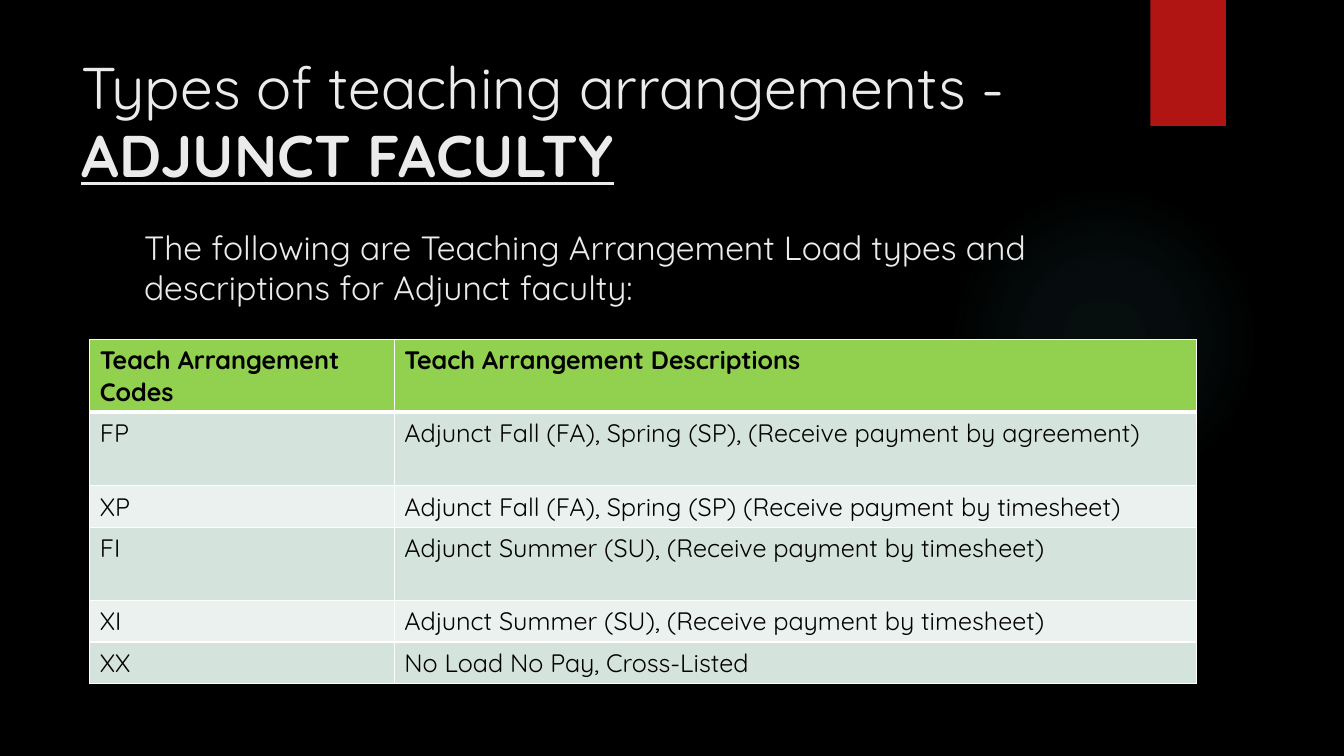
from dataclasses import dataclass

from lxml import etree
from pptx import Presentation
from pptx.dml.color import RGBColor
from pptx.enum.shapes import MSO_SHAPE
from pptx.enum.text import MSO_ANCHOR
from pptx.oxml import parse_xml
from pptx.oxml.ns import qn
from pptx.util import Inches, Pt

RECTANGLE, OVAL = MSO_SHAPE.RECTANGLE, MSO_SHAPE.OVAL
TOP = MSO_ANCHOR.TOP
FONT = "Quicksand"
BLACK, WHITE, PALE = "000000", "FFFFFF", "EBEBEB"
RED, GREEN, GLOW = "B01513", "92D050", "50B9C1"
BANDS = ("D4E3DB", "EBF1EE")
DRAWING_NS = "http://schemas.openxmlformats.org/drawingml/2006/main"


@dataclass
class Run:
    text: str
    size: float
    color: str
    bold: bool = False
    underline: bool = False


@dataclass
class Arrangement:
    code: str
    description: str
    height: float


ARRANGEMENTS = [
    Arrangement("Teach Arrangement Codes", "Teach Arrangement Descriptions", 0.72),
    Arrangement("FP", "Adjunct Fall (FA), Spring (SP), (Receive payment by agreement)", 0.73),
    Arrangement("XP", "Adjunct Fall (FA), Spring (SP) (Receive payment by timesheet)", 0.41),
    Arrangement("FI", "Adjunct Summer (SU), (Receive payment by timesheet)", 0.73),
    Arrangement("XI", "Adjunct Summer (SU), (Receive payment by timesheet)", 0.41),
    Arrangement("XX", "No Load No Pay, Cross-Listed", 0.41),
]
COLUMN_WIDTHS = (3.02, 7.96)


def rgb(value: str) -> RGBColor:
    return RGBColor.from_string(value)


def add_runs(paragraph, runs: list[Run]) -> None:
    for item in runs:
        run = paragraph.add_run()
        run.text = item.text
        run.font.name = FONT
        run.font.size = Pt(item.size)
        run.font.bold = item.bold
        run.font.underline = item.underline
        run.font.color.rgb = rgb(item.color)


def add_text(slide, left: float, top: float, width: float, height: float,
             runs: list[Run], spacing: float = 1.0) -> None:
    frame = slide.shapes.add_textbox(
        Inches(left), Inches(top), Inches(width), Inches(height)).text_frame
    frame.word_wrap = True
    frame.vertical_anchor = TOP
    frame.paragraphs[0].line_spacing = spacing
    add_runs(frame.paragraphs[0], runs)


def add_plain_shape(slide, kind, left: float, top: float, width: float,
                    height: float, color: str):
    shape = slide.shapes.add_shape(
        kind, Inches(left), Inches(top), Inches(width), Inches(height))
    shape.shadow.inherit = False
    shape.fill.solid()
    shape.fill.fore_color.rgb = rgb(color)
    shape.line.fill.background()
    return shape


def fade_outwards(shape, color: str, stops: list[tuple[int, int]]) -> None:
    """Replace the solid fill by a radial one; stops are (position %, opacity %)."""
    stop_xml = "".join(
        f'<a:gs pos="{position * 1000}"><a:srgbClr val="{color}">'
        f'<a:alpha val="{opacity * 1000}"/></a:srgbClr></a:gs>'
        for position, opacity in stops)
    gradient = parse_xml(
        f'<a:gradFill xmlns:a="{DRAWING_NS}"><a:gsLst>{stop_xml}</a:gsLst>'
        '<a:path path="circle"><a:fillToRect l="50000" t="50000" r="50000" b="50000"/>'
        '</a:path></a:gradFill>')
    properties = shape.fill._xPr
    properties.replace(properties.find(qn("a:solidFill")), gradient)


def set_borders(cell, widths: dict[str, float]) -> None:
    properties = cell._tc.get_or_add_tcPr()
    for index, (side, width) in enumerate(widths.items()):
        line = etree.Element(qn(f"a:ln{side}"), w=str(Pt(width)))
        fill = etree.SubElement(line, qn("a:solidFill"))
        etree.SubElement(fill, qn("a:srgbClr"), val=WHITE)
        properties.insert(index, line)


def add_arrangement_table(slide, left: float, top: float) -> None:
    table = slide.shapes.add_table(
        len(ARRANGEMENTS), len(COLUMN_WIDTHS), Inches(left), Inches(top),
        Inches(sum(COLUMN_WIDTHS)),
        Inches(sum(item.height for item in ARRANGEMENTS))).table
    for column, width in zip(table.columns, COLUMN_WIDTHS):
        column.width = Inches(width)
    for row, item in enumerate(ARRANGEMENTS):
        table.rows[row].height = Inches(item.height)
        header = row == 0
        for column, text in enumerate((item.code, item.description)):
            cell = table.cell(row, column)
            cell.fill.solid()
            cell.fill.fore_color.rgb = rgb(GREEN if header else BANDS[(row - 1) % 2])
            set_borders(cell, {"L": 1, "R": 1, "T": 3 if row == 1 else 1,
                               "B": 3 if header else 1})
            add_runs(cell.text_frame.paragraphs[0], [Run(text, 18, BLACK, bold=header)])


def main() -> None:
    deck = Presentation()
    deck.slide_width, deck.slide_height = Inches(13.33), Inches(7.5)
    slide = deck.slides.add_slide(deck.slide_layouts[6])
    slide.background.fill.solid()
    slide.background.fill.fore_color.rgb = rgb(BLACK)

    # Backdrop: soft glow and red ribbon
    glow = add_plain_shape(slide, OVAL, 9.41, 1.83, 3.08, 3.08, GLOW)
    fade_outwards(glow, GLOW, [(0, 7), (36, 6), (69, 0), (100, 0)])
    add_plain_shape(slide, RECTANGLE, 11.41, 0, 0.75, 1.25, RED)

    # Title and introduction
    add_text(slide, 0.71, 0.5, 10.29, 1.53, [
        Run("Types of teaching arrangements - ", 42, PALE),
        Run("ADJUNCT FACULTY", 42, PALE, bold=True, underline=True),
    ], spacing=0.96)
    add_text(slide, 1.33, 2.2, 10.29, 0.99, [
        Run("The following are Teaching Arrangement Load types and "
            "descriptions for Adjunct faculty:", 24, PALE),
    ])

    # Load types
    add_arrangement_table(slide, 0.89, 3.37)
    deck.save("out.pptx")


if __name__ == "__main__":
    main()
